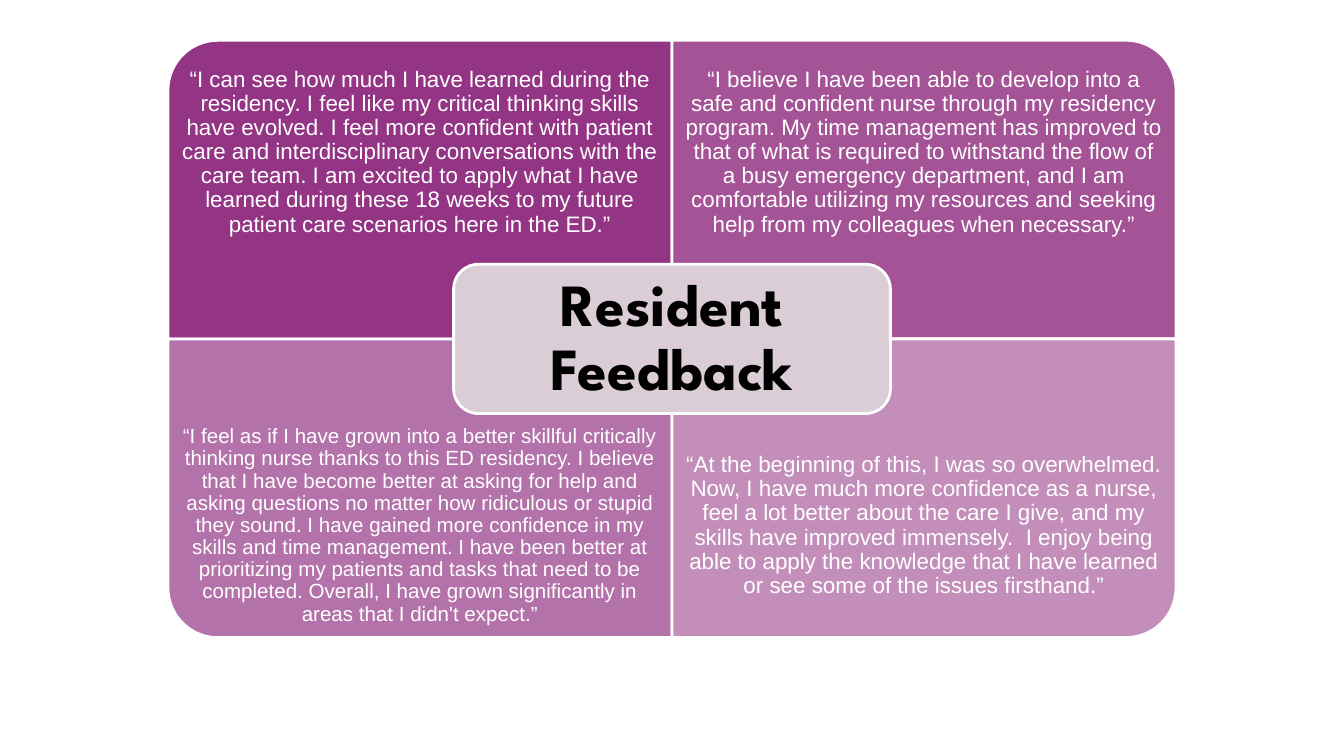
import lxml.etree
import pptx
import pptx.dml.color
import pptx.enum.shapes
import pptx.enum.text
import pptx.oxml.ns
import pptx.util

Pt = pptx.util.Pt
SHAPES = pptx.enum.shapes.MSO_SHAPE
PLUM, MAUVE, WHITE, BLACK = "882077", "DACDD6", "FFFFFF", "000000"

# Centre of the matrix and size of its parts, in points
CENTER_X, CENTER_Y = 360, 181.6
QUADRANT_W, QUADRANT_H = 270, 160
QUOTE_H = 120
HUB_W, HUB_H = 234, 80
HUB_MARGIN = 4

# Column, row, rotation, opacity, text size, quote
QUADRANTS = [
    (0, 0, 270, 90, 12,
     "“I can see how much I have learned during the residency. I feel like my "
     "critical thinking skills have evolved. I feel more confident with patient "
     "care and interdisciplinary conversations with the care team. I am excited "
     "to apply what I have learned during these 18 weeks to my future patient "
     "care scenarios here in the ED.”"),
    (1, 0, 0, 77, 12,
     "“I believe I have been able to develop into a safe and confident nurse "
     "through my residency program. My time management has improved to that of "
     "what is required to withstand the flow of a busy emergency department, and "
     "I am comfortable utilizing my resources and seeking help from my "
     "colleagues when necessary.”"),
    (0, 1, 180, 63, 11,
     "“I feel as if I have grown into a better skillful critically thinking "
     "nurse thanks to this ED residency. I believe that I have become better at "
     "asking for help and asking questions no matter how ridiculous or stupid "
     "they sound. I have gained more confidence in my skills and time "
     "management. I have been better at prioritizing my patients and tasks that "
     "need to be completed. Overall, I have grown significantly in areas that I "
     "didn't expect.”"),
    (1, 1, 90, 50, 12,
     "“At the beginning of this, I was so overwhelmed. Now, I have much more "
     "confidence as a nurse, feel a lot better about the care I give, and my "
     "skills have improved immensely.  I enjoy being able to apply the knowledge "
     "that I have learned or see some of the issues firsthand.”"),
]


def rgb(color):
    return pptx.dml.color.RGBColor.from_string(color)


def write(frame, text, *, size, color=WHITE, font="Arial", bold=False, inset=6.7):
    """Fill a text frame with one centred paragraph."""
    frame.word_wrap = True
    frame.auto_size = pptx.enum.text.MSO_AUTO_SIZE.NONE
    frame.vertical_anchor = pptx.enum.text.MSO_ANCHOR.MIDDLE
    frame.margin_left = frame.margin_right = Pt(inset)
    frame.margin_top = frame.margin_bottom = Pt(inset)
    paragraph = frame.paragraphs[0]
    paragraph.alignment = pptx.enum.text.PP_ALIGN.CENTER
    paragraph.line_spacing = 0.9
    run = paragraph.add_run()
    run.text = text
    run.font.name = font
    run.font.size = Pt(size)
    run.font.bold = bold
    run.font.color.rgb = rgb(color)


class MatrixSlide:
    def __init__(self, slide, outline=WHITE, outline_width=1.5):
        self.slide = slide
        self.outline = outline
        self.outline_width = outline_width

    def panel(self, kind, left, top, width, height, color, rotation=0, opacity=100):
        # A quarter turn swaps the sides around the same centre
        if rotation % 180:
            left += (width - height) / 2
            top += (height - width) / 2
            width, height = height, width
        panel = self.slide.shapes.add_shape(
            kind, Pt(left), Pt(top), Pt(width), Pt(height))
        panel.rotation = rotation
        panel.shadow.inherit = False
        panel.fill.solid()
        panel.fill.fore_color.rgb = rgb(color)
        panel.line.color.rgb = rgb(self.outline)
        panel.line.width = Pt(self.outline_width)
        if opacity < 100:
            qn = pptx.oxml.ns.qn
            solid_fill = panel.element.spPr.find(qn("a:solidFill"))
            alpha = lxml.etree.SubElement(solid_fill[0], qn("a:alpha"))
            alpha.set("val", str(opacity * 1000))

    def quote(self, left, top, width, height, text, size):
        box = self.slide.shapes.add_textbox(Pt(left), Pt(top), Pt(width), Pt(height))
        write(box.text_frame, text, size=size)

    def title(self, left, top, width, height, text):
        title = self.slide.shapes.title
        title.left, title.top = Pt(left), Pt(top)
        title.width, title.height = Pt(width), Pt(height)
        write(title.text_frame, text, size=32, color=BLACK,
              font="League Spartan", bold=True, inset=9.6)
        # Bring the title in front of the panels
        self.slide.shapes.element.append(title.element)


def main():
    deck = pptx.Presentation()
    deck.slide_width, deck.slide_height = Pt(720), Pt(405)
    matrix = MatrixSlide(deck.slides.add_slide(deck.slide_layouts[5]))

    # Four quotes, each kept clear of the central hub
    for column, row, rotation, opacity, size, text in QUADRANTS:
        left = CENTER_X + (column - 1) * QUADRANT_W
        top = CENTER_Y + (row - 1) * QUADRANT_H
        matrix.panel(SHAPES.ROUND_1_RECTANGLE, left, top, QUADRANT_W, QUADRANT_H,
                     PLUM, rotation, opacity)
        matrix.quote(left, top + row * (QUADRANT_H - QUOTE_H),
                     QUADRANT_W, QUOTE_H, text, size)

    # Central hub with the title
    hub_left, hub_top = CENTER_X - HUB_W / 2, CENTER_Y - HUB_H / 2
    matrix.panel(SHAPES.ROUNDED_RECTANGLE, hub_left, hub_top, HUB_W, HUB_H, MAUVE)
    matrix.title(hub_left + HUB_MARGIN, hub_top + HUB_MARGIN,
                 HUB_W - 2 * HUB_MARGIN, HUB_H - 2 * HUB_MARGIN, "Resident Feedback")

    deck.save("out.pptx")


if __name__ == "__main__":
    main()
